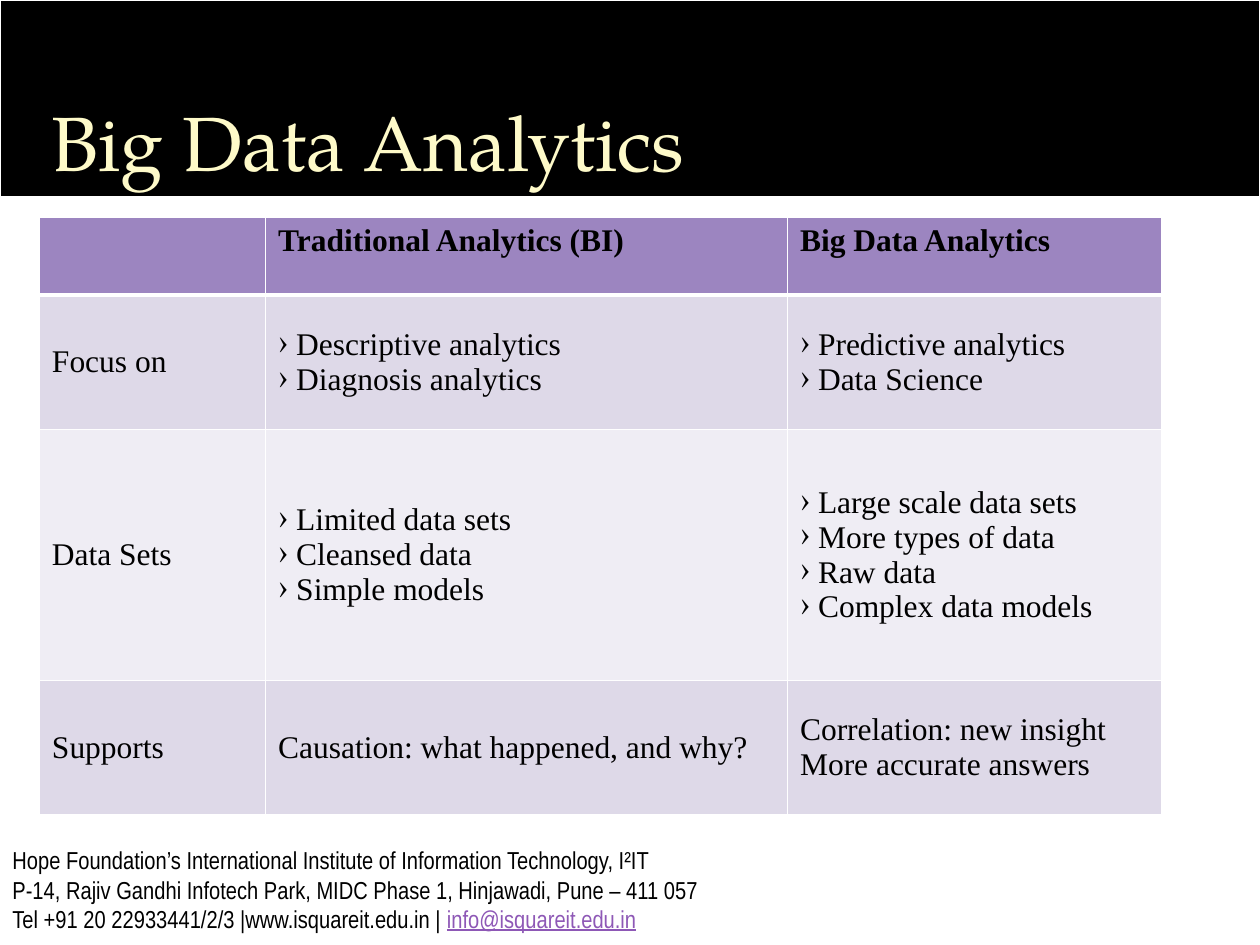
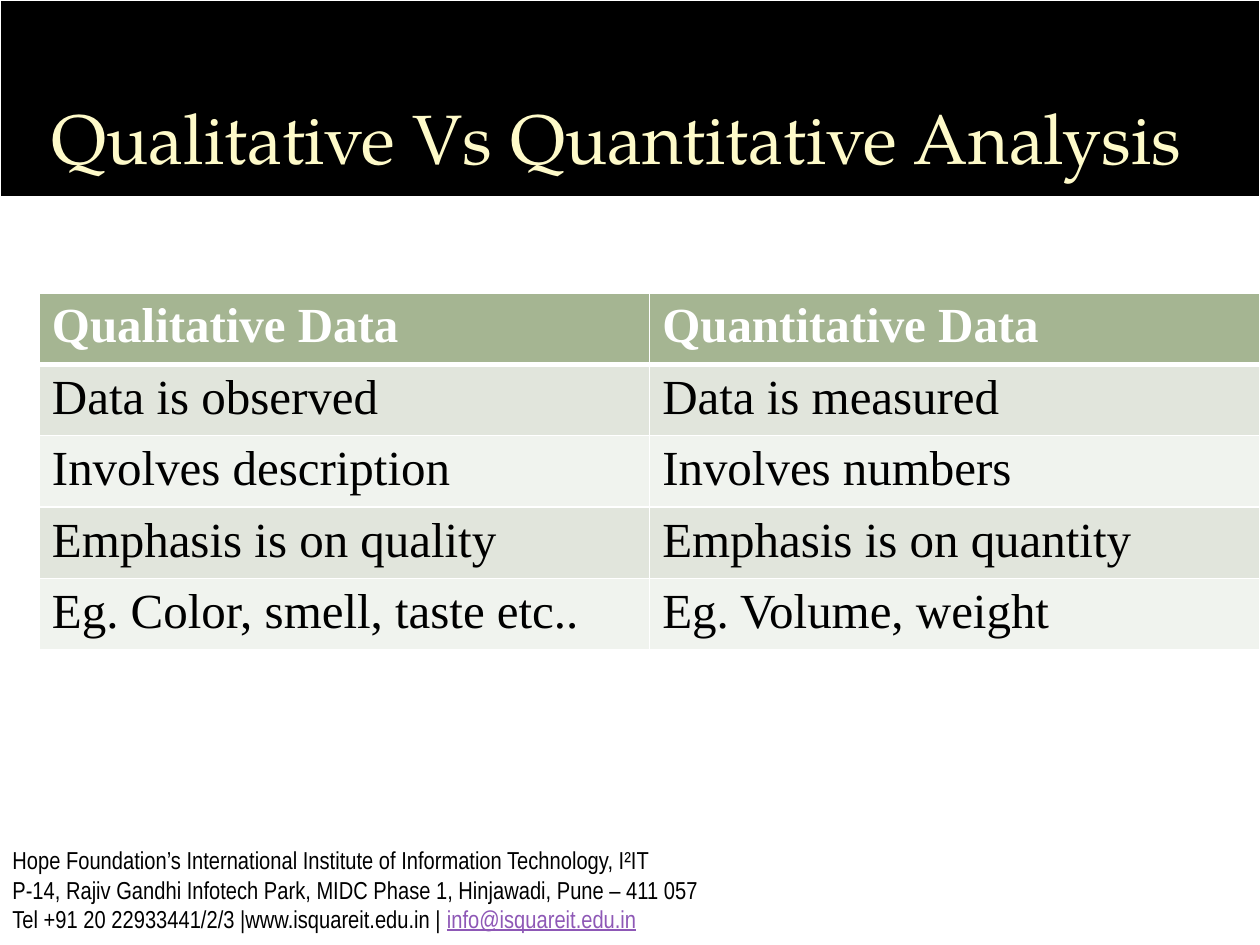
from lxml.etree import SubElement
from pptx import Presentation
from pptx.dml.color import RGBColor
from pptx.enum.shapes import MSO_SHAPE
from pptx.enum.text import MSO_ANCHOR
from pptx.oxml.ns import qn
from pptx.util import Pt

PAGE_WIDTH, PAGE_HEIGHT = 720, 540
LEFT = 22.5
WHITE, BLACK = "FFFFFF", "000000"
CREAM, LINK = "FEFAC9", "8E58B6"
SERIF = "Times New Roman"
BULLET = "›"
BULLET_INDENT = 10.3
TITLE_FORMAT = {"name": "TeX Gyre Pagella", "color": CREAM}
FOOTER_FORMAT = {"name": "Arial Narrow", "size": 14, "color": BLACK}
FOOTER_BOX = (0, 479.5, 564, 58.3)
FOOTER_LINES = [
    [("Hope Foundation’s International Institute of Information Technology, I²IT", {})],
    [("P-14, Rajiv Gandhi Infotech Park, MIDC Phase 1, Hinjawadi, Pune – 411 057", {})],
    [("Tel +91 20 22933441/2/3 |www.isquareit.edu.in | ", {}),
     ("info@isquareit.edu.in", {"color": LINK, "underline": True})],
]

ANALYTICS = {
    "title": "Big Data Analytics",
    "title_size": 44,
    "title_box": (LEFT, 50.4, 680.4, 59.8),
    "table_box": (LEFT, 123.9, 641.5, 343.4),
    "columns": [129.3, 298.2, 214],
    "heights": [44.6, 77, 143.3, 77],
    "fills": ["9C85C0", "DED9E8", "EFEDF4"],
    "size": 18,
    "header_color": BLACK,
    "body_anchor": MSO_ANCHOR.MIDDLE,
    "rows": [
        [[], ["Traditional Analytics (BI)"], ["Big Data Analytics"]],
        [["Focus on"],
         ["›Descriptive analytics", "›Diagnosis analytics"],
         ["›Predictive analytics", "›Data Science"]],
        [["Data Sets"],
         ["›Limited data sets", "›Cleansed data", "›Simple models"],
         ["›Large scale data sets", "›More types of data", "›Raw data",
          "›Complex data models"]],
        [["Supports"],
         ["Causation: what happened, and why?"],
         ["Correlation: new insight", "More accurate answers"]],
    ],
}

COMPARISON = {
    "title": "Qualitative Vs Quantitative Analysis",
    "title_size": 40,
    "title_box": (LEFT, 50.4, 680.4, 55.4),
    "table_box": (LEFT, 167.3, 697.5, 203.8),
    "columns": [348.75] * 2,
    "heights": [29.2] * 5,
    "fills": ["A5B592", "E1E5DC", "F0F3EE"],
    "size": 28,
    "header_color": WHITE,
    "body_anchor": MSO_ANCHOR.TOP,
    "rows": [
        [["Qualitative Data"], ["Quantitative Data"]],
        [["Data is observed"], ["Data is measured"]],
        [["Involves description"], ["Involves numbers"]],
        [["Emphasis is on quality"], ["Emphasis is on quantity"]],
        [["Eg. Color, smell, taste etc.."], ["Eg. Volume, weight"]],
    ],
}


def color(value):
    """Turn a hex string into a colour."""
    return RGBColor.from_string(value)


def points(box):
    """Turn a box of numbers into lengths."""
    return [Pt(length) for length in box]


def format_font(font, values):
    """Set font attributes from a dict of format values."""
    for name, value in values.items():
        if name == "color":
            font.color.rgb = color(value)
        else:
            setattr(font, name, Pt(value) if name == "size" else value)


def write_lines(frame, lines, values):
    """Fill a text frame with lines, each a list of text and format pairs."""
    for index, spans in enumerate(lines):
        para = frame.paragraphs[0] if index == 0 else frame.add_paragraph()
        for text, extra in spans:
            if text.startswith(BULLET):
                add_bullet(para)
                text = text.removeprefix(BULLET)
            span = para.add_run()
            span.text = text
            format_font(span.font, {**values, **extra})


def add_bullet(para):
    """Give a paragraph a hanging bullet."""
    properties = para._p.get_or_add_pPr()
    properties.set("marL", str(Pt(BULLET_INDENT)))
    properties.set("indent", str(-Pt(BULLET_INDENT)))
    SubElement(properties, qn("a:buChar"), char=BULLET)


def add_text(page, box, lines, values, anchor=MSO_ANCHOR.TOP):
    """Place a wrapped text box."""
    frame = page.shapes.add_textbox(*points(box)).text_frame
    frame.word_wrap = True
    frame.vertical_anchor = anchor
    write_lines(frame, lines, values)


def add_band(page, box):
    """Draw the black band behind the title."""
    band = page.shapes.add_shape(MSO_SHAPE.RECTANGLE, *points(box))
    band.shadow.inherit = False
    band.fill.solid()
    band.fill.fore_color.rgb = color(BLACK)
    band.line.color.rgb = color(WHITE)
    band.line.width = Pt(0.75)


def add_borders(cell, widths):
    """Draw white cell borders with a width for each side."""
    properties = cell._tc.get_or_add_tcPr()
    for side, width in widths.items():
        line = SubElement(properties, qn(f"a:ln{side}"), w=str(Pt(width)))
        fill = SubElement(line, qn("a:solidFill"))
        SubElement(fill, qn("a:srgbClr"), val=WHITE)


def add_grid(page, box, content):
    """Build the table with its header row and alternating body rows."""
    rows, columns = content["rows"], content["columns"]
    holder = page.shapes.add_table(len(rows), len(columns), *points(box))
    table = holder.table
    table.first_row = table.horz_banding = False
    for column, width in zip(table.columns, columns):
        column.width = Pt(width)
    for row, height in zip(table.rows, content["heights"]):
        row.height = Pt(height)
    holder.height = Pt(box[3])
    header_fill, *band_fills = content["fills"]
    for row_index, texts in enumerate(rows):
        header = row_index == 0
        fill = header_fill if header else band_fills[(row_index - 1) % 2]
        values = {"name": SERIF, "size": content["size"], "bold": header,
                  "color": content["header_color"] if header else BLACK}
        widths = {"L": 1, "R": 1, "T": 3 if row_index == 1 else 1, "B": 3 if header else 1}
        for cell, lines in zip(table.rows[row_index].cells, texts):
            add_borders(cell, widths)
            cell.fill.solid()
            cell.fill.fore_color.rgb = color(fill)
            cell.vertical_anchor = MSO_ANCHOR.TOP if header else content["body_anchor"]
            write_lines(cell.text_frame, [[(line, {})] for line in lines], values)


def add_page(deck, content):
    """Add one slide with band, title, table and footer."""
    page = deck.slides.add_slide(deck.slide_layouts[6])
    add_band(page, (0, 0, PAGE_WIDTH, 112.3))
    add_text(page, content["title_box"], [[(content["title"], {})]],
             {**TITLE_FORMAT, "size": content["title_size"]}, MSO_ANCHOR.BOTTOM)
    add_grid(page, content["table_box"], content)
    add_text(page, FOOTER_BOX, FOOTER_LINES, FOOTER_FORMAT)


def main():
    """Build and save the deck."""
    deck = Presentation()
    deck.slide_width, deck.slide_height = Pt(PAGE_WIDTH), Pt(PAGE_HEIGHT)
    for content in (ANALYTICS, COMPARISON):
        add_page(deck, content)
    deck.save("out.pptx")


if __name__ == "__main__":
    main()
